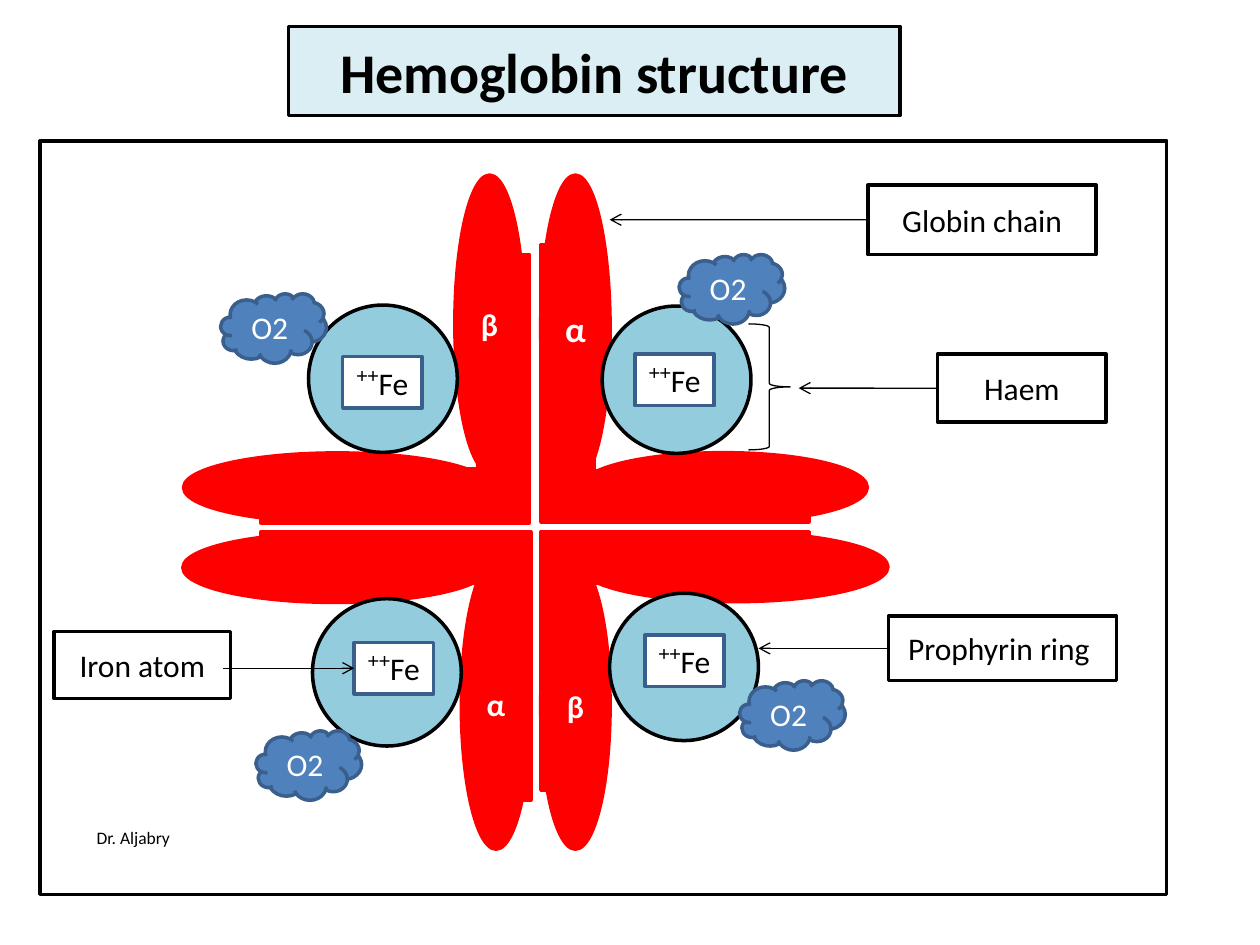
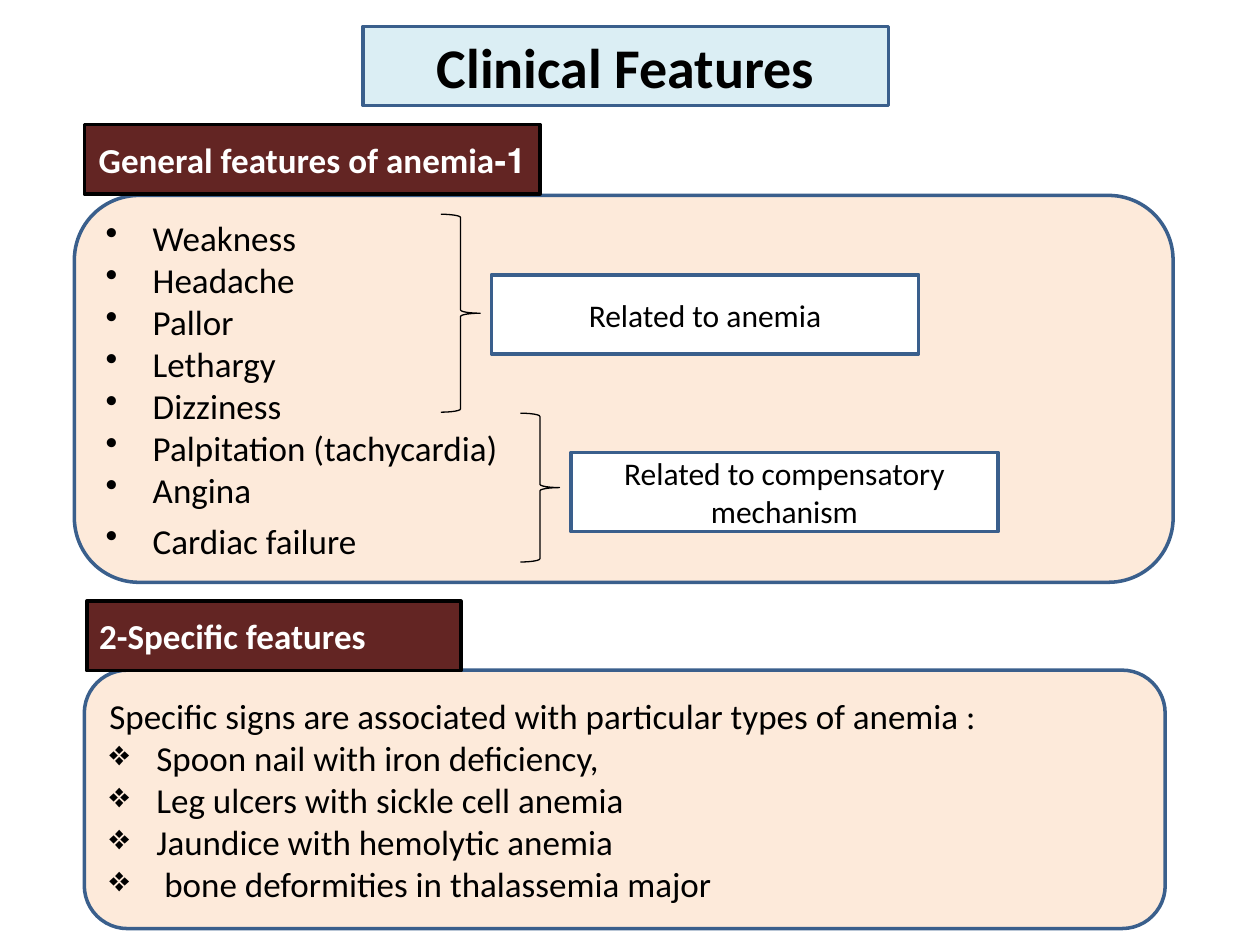
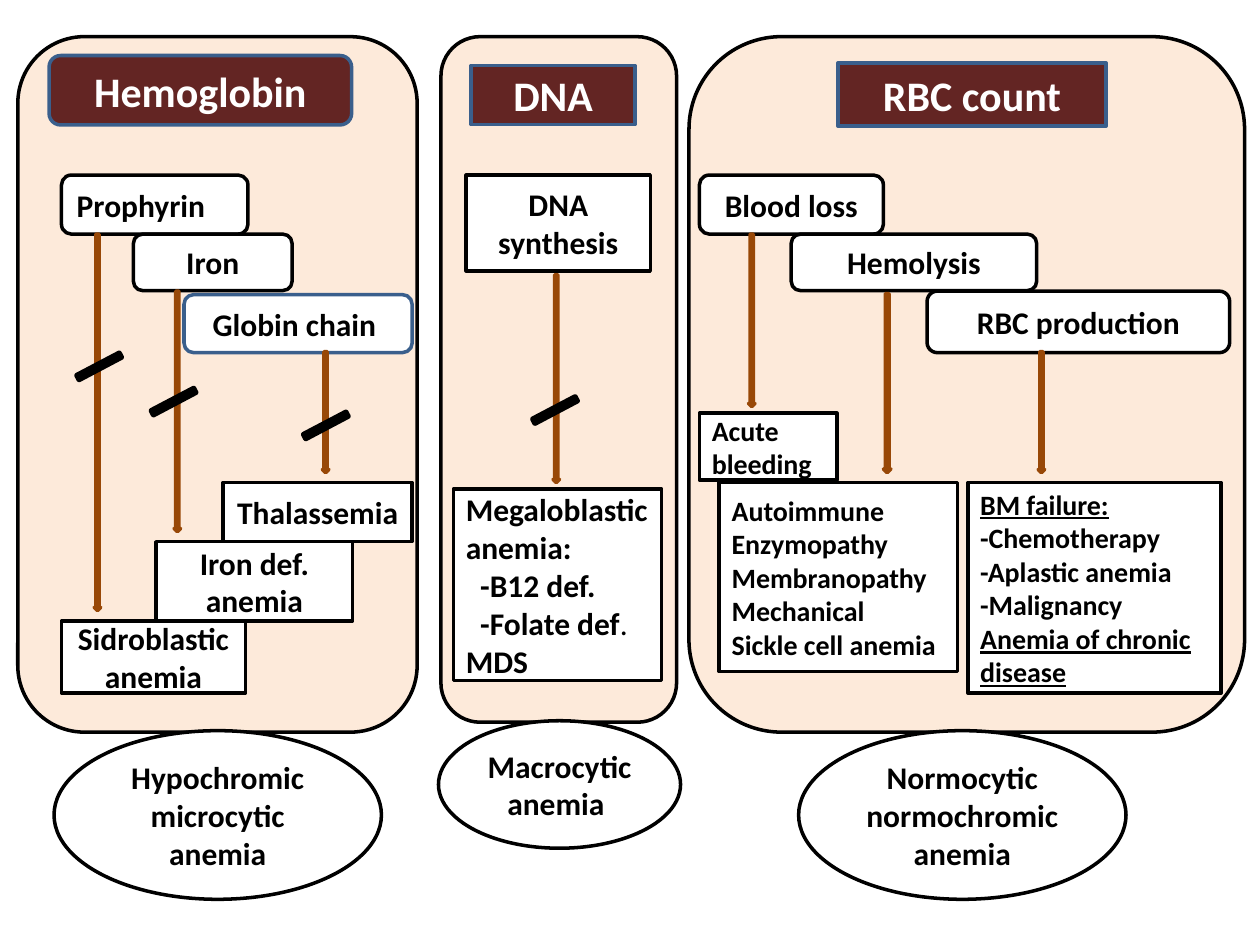
from lxml import etree
from pptx import Presentation
from pptx.dml.color import RGBColor
from pptx.enum.shapes import MSO_CONNECTOR, MSO_SHAPE as SH
from pptx.enum.text import MSO_ANCHOR, PP_ALIGN as AL
from pptx.oxml.ns import qn
from pptx.util import Cm, Pt

FONT = "Calibri"
C = {
    "black": "000000", "white": "FFFFFF", "blue": "3A5F8C", "cloud": "4F81BD",
    "title": "DBEEF4", "peach": "FDEADA", "maroon": "632523",
    "red": "FF0000", "ring": "93CDDD", "brown": "984807",
}

TITLES = {
    "structure": ("Hemoglobin structure", (5.82, 0.53, 12.32, 1.8), "black"),
    "features": ("Clinical Features", (7.32, 0.53, 10.59, 1.6), "blue"),
}

FRAME = (0.81, 2.84, 22.71, 15.19)
CHAIN_CORNERS = [
    ((10.9, 4.93, 5.41, 5.59), 0),
    ((5.26, 10.72, 5.44, 5.41), 180),
    ((5.26, 5.13, 5.41, 5.41), 270),
    ((11, 10.62, 5.21, 5.41), 90),
]
LOBE_W = 1.4
CHAIN_LOBES = [
    (10.9, 3.53, 6.2, 0, "α", 20),
    (6.1, 6.73, 6.2, 270, "", 18),
    (13.89, 6.93, 5.79, 270, "", 18),
    (9.17, 3.53, 5.99, 0, "β", 18),
    (10.9, 11.33, 5.79, 0, "β", 18),
    (6.07, 8.36, 6.17, 90, "", 18),
    (14.1, 8.33, 6.2, 90, "", 18),
    (9.3, 11.28, 5.84, 0, "α", 18),
]
RING, IRON, OXYGEN = (3, 2.97), (1.6, 1.04), (2.13, 1.4)
HAEMS = [
    {"ring": (12.14, 6.17), "iron": (12.8, 7.14), "oxygen": (13.69, 5.13)},
    {"ring": (12.29, 11.96), "iron": (13, 12.8), "oxygen": (14.91, 13.72)},
    {"ring": (6.22, 6.15), "iron": (6.91, 7.19), "oxygen": (4.45, 5.92)},
    {"ring": (6.3, 12.07), "iron": (7.14, 12.95), "oxygen": (5.16, 14.73)},
]
POINTING_LABELS = [
    ("Globin chain", (17.5, 3.73, 4.6, 1.4), 12.29),
    ("Haem", (18.9, 7.14, 3.4, 1.37), 16.1),
    ("Prophyrin ring ", (17.91, 12.42, 4.6, 1.3), 15.29),
]
IRON_LABEL = ("Iron atom", (1.09, 12.73, 3.56, 1.35), 4.5)
HAEM_BRACE = (15.09, 6.53, 0.84, 2.54)
AUTHOR = ("Dr. Aljabry", (1.7, 16.54, 2.21, 0.69))

GENERAL = ["Weakness", "Headache", "Pallor", "Lethargy", "Dizziness",
           "Palpitation (tachycardia)", "Angina"]
SPECIFIC = ["Spoon nail with iron deficiency,", "Leg ulcers with sickle cell anemia",
            "Jaundice with hemolytic anemia", " bone deformities in thalassemia major"]
FEATURE_BOXES = [
    ((1.5, 3.94, 22.15, 7.8),
     [{"runs": [(t,)], "bullet": "•"} for t in GENERAL]
     + [{"runs": [("Cardiac failure",)], "bullet": "•", "before": 5}]),
    ((1.7, 13.51, 21.79, 5.21),
     ["Specific signs are associated with particular types of anemia :"]
     + [{"runs": [(t,)], "bullet": "❖"} for t in SPECIFIC]),
]
FEATURE_HEADS = [
    ("1-General features of anemia", (1.7, 2.51, 9.19, 1.4), AL.CENTER, True),
    ("2-Specific features", (1.75, 12.12, 7.54, 1.4), AL.LEFT, False),
]
FEATURE_NOTES = [
    ("Related to anemia", (9.91, 5.54, 8.61, 1.6), (8.89, 4.32, 0.79, 3.99)),
    ("Related to compensatory mechanism", (11.51, 9.12, 8.61, 1.6), (10.49, 8.33, 0.79, 3)),
]

RECT, ROUND, PROCESS = SH.RECTANGLE, SH.ROUNDED_RECTANGLE, SH.FLOWCHART_PROCESS
COLUMNS = [
    {"panel": (0.36, 0.74, 8.05, 14.02),
     "head": ("Hemoglobin", ROUND, (0.99, 1.12, 6.1, 1.4)),
     "type": ("Hypochromic microcytic anemia", (1.09, 14.73, 6.6, 3.4))},
    {"panel": (8.89, 0.74, 4.75, 13.82),
     "head": ("DNA", PROCESS, (9.5, 1.32, 3.3, 1.19)),
     "type": ("Macrocytic anemia ", (8.84, 14.53, 4.88, 2.57))},
    {"panel": (13.89, 0.74, 11.2, 14.02),
     "head": ("RBC count", RECT, (16.89, 1.27, 5.41, 1.27)),
     "type": ("Normocytic normochromic anemia", (16.1, 14.73, 6.6, 3.4))},
]
CAUSES = [
    ("Prophyrin", ROUND, (1.24, 3.53, 3.76, 1.19), "black", AL.LEFT),
    ("Iron", ROUND, (2.69, 4.72, 3.2, 1.14), "black", AL.CENTER),
    ("Globin chain ", ROUND, (3.71, 5.94, 4.6, 1.17), "blue", AL.CENTER),
    ("DNA synthesis", PROCESS, (9.4, 3.53, 3.71, 1.93), "black", AL.CENTER),
    ("Blood loss", ROUND, (14.1, 3.53, 3.71, 1.19), "black", AL.CENTER),
    ("Hemolysis", ROUND, (15.95, 4.72, 4.95, 1.14), "black", AL.CENTER),
    ("RBC production", ROUND, (18.69, 5.87, 6.1, 1.24), "black", AL.CENTER),
]
OUTCOMES = [
    (["Thalassemia"], RECT, (4.5, 9.73, 3.81, 1.19), 18, AL.CENTER),
    (["Iron def. anemia"], RECT, (3.15, 10.92, 3.96, 1.6), 18, AL.CENTER),
    (["Sidroblastic anemia"], RECT, (1.24, 12.52, 3.71, 1.45), 18, AL.CENTER),
    (["Megaloblastic anemia:",
      {"runs": [("-B12 def.",)], "indent": 0.29},
      {"runs": [("-Folate def",), (".", {"bold": False})], "indent": 0.29},
      "MDS"], PROCESS, (9.14, 9.86, 4.2, 3.86), 18, AL.LEFT),
    (["Acute bleeding"], PROCESS, (14.1, 8.33, 2.77, 1.35), 16, AL.LEFT),
    (["Autoimmune", "Enzymopathy", "Membranopathy", "Mechanical", "Sickle cell anemia"],
     RECT, (14.5, 9.73, 4.8, 3.81), 16, AL.LEFT),
    ([{"runs": [("BM failure:", {"underline": True})]},
      "-Chemotherapy", "-Aplastic anemia", "-Malignancy",
      {"runs": [("Anemia of chronic disease", {"underline": True})]}],
     PROCESS, (19.51, 9.73, 5.11, 4.24), 16, AL.LEFT),
]
ARROWS = [
    (1.9, 4.72, 0.13, 7.59), (3.51, 5.87, 0.13, 4.85), (6.5, 7.09, 0.13, 2.44),
    (11.15, 5.54, 0.13, 4.19), (15.09, 4.72, 0.13, 3.48),
    (17.81, 5.92, 0.15, 3.61), (20.93, 7.09, 0.13, 2.44),
]
BLOCK_BARS = [(1.5, 7.32), (3, 8.03), (6.07, 8.51), (10.69, 8.2)]


def rgb(name):
    return RGBColor.from_string(C[name])


def paint(sp, fill, line, width=2):
    if fill:
        sp.fill.solid()
        sp.fill.fore_color.rgb = rgb(fill)
    else:
        sp.fill.background()
    sp.line.color.rgb = rgb(line)
    sp.line.width = Pt(width)


def write(sp, lines, size=18, color="black", bold=False, align=AL.CENTER, rtl=False):
    tf = sp.text_frame
    tf.word_wrap = True
    for i, line in enumerate(lines):
        item = {"runs": [(line,)]} if isinstance(line, str) else line
        p = tf.paragraphs[0] if i == 0 else tf.add_paragraph()
        p.alignment = align
        pPr = p._p.get_or_add_pPr()
        if rtl:
            pPr.set("rtl", "1")
        if "before" in item:
            p.space_before = Pt(item["before"])
        if "indent" in item:
            pPr.set("marL", str(Cm(item["indent"])))
        if "bullet" in item:
            pPr.set("marL", str(Cm(0.95)))
            pPr.set("indent", str(-Cm(0.95)))
            etree.SubElement(pPr, qn("a:buChar")).set("char", item["bullet"])
        for text, *style in item["runs"]:
            r = p.add_run()
            r.text = text
            f = r.font
            f.name, f.size, f.bold = FONT, Pt(size), bold
            f.color.rgb = rgb(color)
            for key, value in (style[0] if style else {}).items():
                setattr(f, key, value)


def shape(s, kind, box, fill="white", line="black", lines=(), rot=0, width=2, **text):
    sp = s.shapes.add_shape(kind, *map(Cm, box))
    sp.shadow.inherit = False
    sp.rotation = rot
    paint(sp, fill, line, width)
    write(sp, lines, **text)
    return sp


def brace(s, box):
    shape(s, SH.RIGHT_BRACE, box, None, width=0.75)


def arrow(s, x1, x2, y):
    cx = s.shapes.add_connector(MSO_CONNECTOR.STRAIGHT, Cm(x1), Cm(y), Cm(x2), Cm(y))
    cx.line.color.rgb = rgb("black")
    cx.line.width = Pt(0.75)
    spPr = cx._element.spPr
    etree.SubElement(spPr.find(qn("a:ln")), qn("a:tailEnd")).set("type", "arrow")
    etree.SubElement(spPr, qn("a:effectLst"))
    return cx


def titled_slide(prs, key):
    text, box, line = TITLES[key]
    s = prs.slides.add_slide(prs.slide_layouts[5])
    t = s.shapes.title
    t.left, t.top, t.width, t.height = map(Cm, box)
    paint(t, "title", line)
    t.text_frame.vertical_anchor = MSO_ANCHOR.MIDDLE
    write(t, [text], size=32, bold=True)
    return s


def structure_slide(prs):
    s = titled_slide(prs, "structure")
    shape(s, RECT, FRAME)
    for box, rot in CHAIN_CORNERS:
        sp = shape(s, SH.CORNER, box, "red", "red", rot=rot)
        sp.adjustments[0], sp.adjustments[1] = 0.19, 0.2
    for x, y, h, rot, name, size in CHAIN_LOBES:
        shape(s, SH.OVAL, (x, y, LOBE_W, h), "red", "red", [name] if name else [],
              rot, size=size, color="white", bold=True)
    for haem in HAEMS:
        shape(s, SH.OVAL, haem["ring"] + RING, "ring")
    for haem in HAEMS:
        iron = shape(s, RECT, haem["iron"] + IRON, "white", "blue", ["Fe⁺⁺"], rtl=True)
    for text, box, tip in POINTING_LABELS:
        label = shape(s, RECT, box, lines=[text])
        arrow(s, box[0], tip, box[1] + box[3] / 2).begin_connect(label, 1)
    text, box, start = IRON_LABEL
    shape(s, RECT, box, lines=[text])
    x, y = HAEMS[-1]["iron"]
    arrow(s, start, x, y + IRON[1] / 2).end_connect(iron, 1)
    brace(s, HAEM_BRACE)
    for haem in HAEMS:
        shape(s, SH.CLOUD, haem["oxygen"] + OXYGEN, "cloud", "blue", ["O2"], color="white")
    text, box = AUTHOR
    write(s.shapes.add_textbox(*map(Cm, box)), [text], size=10, align=AL.LEFT)


def features_slide(prs):
    s = titled_slide(prs, "features")
    for box, lines in FEATURE_BOXES:
        shape(s, ROUND, box, "peach", "blue", lines, size=20, align=AL.LEFT)
    for text, box, brace_box in FEATURE_NOTES:
        brace(s, brace_box)
        shape(s, RECT, box, "white", "blue", [text])
    for text, box, align, rtl in FEATURE_HEADS:
        shape(s, RECT, box, "maroon", "black", [text], size=20, color="white",
              bold=True, align=align, rtl=rtl)


def classification_slide(prs):
    s = prs.slides.add_slide(prs.slide_layouts[6])
    for col in COLUMNS:
        shape(s, ROUND, col["panel"], "peach")
        text, kind, box = col["head"]
        shape(s, kind, box, "maroon", "blue", [text], size=24, color="white", bold=True)
        text, box = col["type"]
        shape(s, SH.OVAL, box, lines=[text], bold=True)
    for text, kind, box, line, align in CAUSES:
        shape(s, kind, box, "white", line, [text], bold=True, align=align)
    for lines, kind, box, size, align in OUTCOMES:
        shape(s, kind, box, lines=lines, size=size, bold=True, align=align)
    for box in ARROWS:
        shape(s, SH.DOWN_ARROW, box, "brown", "brown")
    for x, y in BLOCK_BARS:
        shape(s, ROUND, (x, y, 1, 0.13), "black", rot=332.2)


def main():
    prs = Presentation()
    prs.slide_width, prs.slide_height = Cm(25.4), Cm(19.05)
    structure_slide(prs)
    features_slide(prs)
    classification_slide(prs)
    prs.save("out.pptx")


if __name__ == "__main__":
    main()
